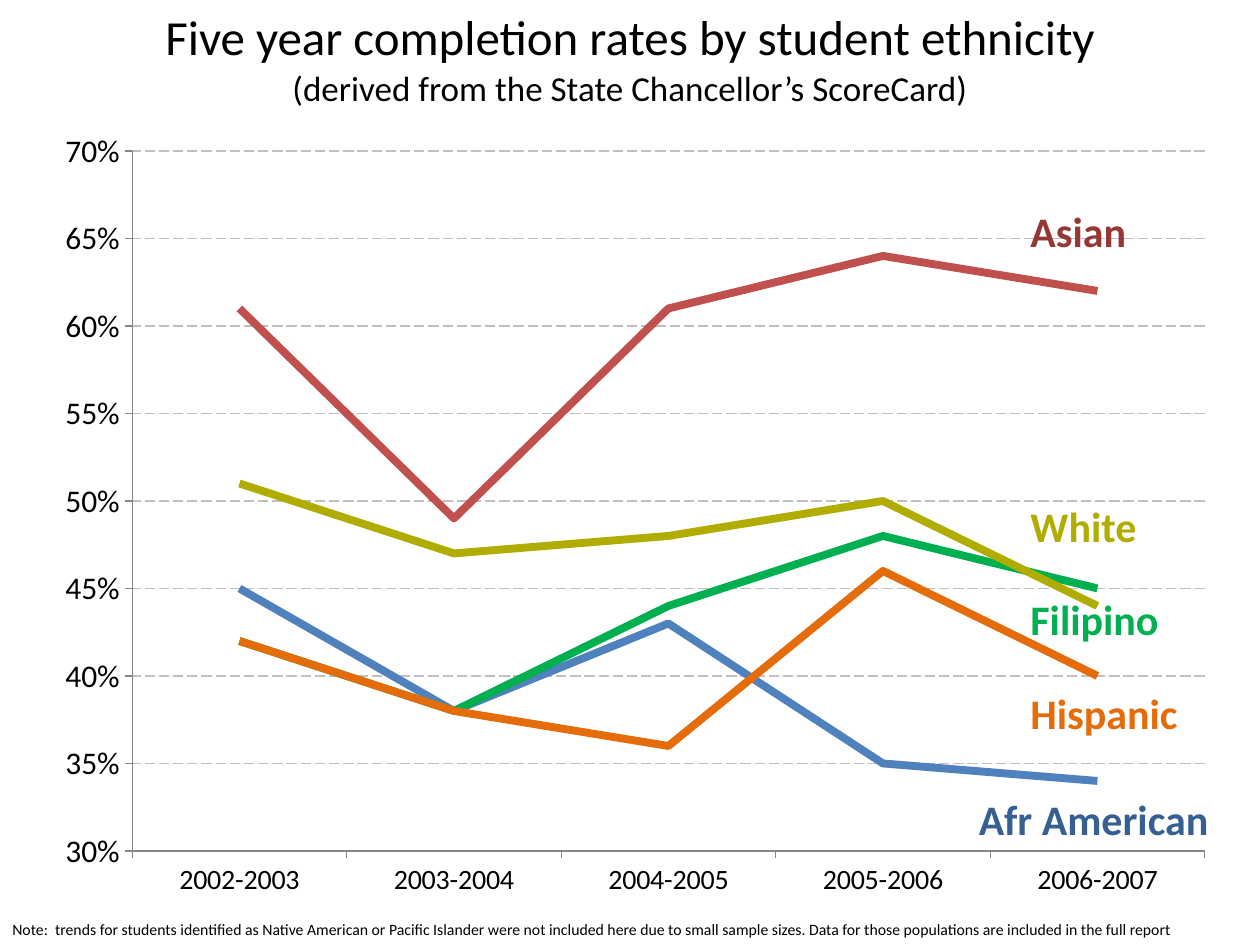
from lxml import etree
from pptx import Presentation
from pptx.chart.data import CategoryChartData
from pptx.dml.color import RGBColor
from pptx.enum.chart import XL_CHART_TYPE, XL_MARKER_STYLE, XL_TICK_MARK
from pptx.enum.dml import MSO_LINE
from pptx.enum.text import MSO_ANCHOR, MSO_AUTO_SIZE, PP_ALIGN
from pptx.util import Inches, Pt

LINE_CHART = XL_CHART_TYPE.LINE
NO_MARKER = XL_MARKER_STYLE.NONE
TICK_OUTSIDE, TICK_NONE = XL_TICK_MARK.OUTSIDE, XL_TICK_MARK.NONE
LONG_DASH = MSO_LINE.LONG_DASH
TOP, NO_AUTOFIT = MSO_ANCHOR.TOP, MSO_AUTO_SIZE.NONE
LEFT, CENTER = PP_ALIGN.LEFT, PP_ALIGN.CENTER

FONT = "Calibri"
COLORS = {
    "text": "000000", "grid": "BFBFBF", "axis": "868686",
    "blue": "4F81BD", "dark blue": "376092",
    "red": "C0504D", "dark red": "953735",
    "green": "00B050", "orange": "E46C0A", "olive": "B0AC00",
}

TITLE = "Five year completion rates by student ethnicity"
SUBTITLE = "(derived from the State Chancellor’s ScoreCard)"
NOTE = ("Note:  trends for students identified as Native American or Pacific Islander "
        "were not included here due to small sample sizes. Data for those populations "
        "are included in the full report")

YEARS = ["2002-2003", "2003-2004", "2004-2005", "2005-2006", "2006-2007"]
RATES = [
    ("Afr American", "blue", [0.45, 0.38, 0.43, 0.35, 0.34]),
    ("Asian", "red", [0.61, 0.49, 0.61, 0.64, 0.62]),
    ("Filipino", "green", [0.42, 0.38, 0.44, 0.48, 0.45]),
    ("Hispanic", "orange", [0.42, 0.38, 0.36, 0.46, 0.40]),
    ("White", "olive", [0.51, 0.47, 0.48, 0.50, 0.44]),
]
LINE_LABELS = [
    ("Hispanic", "orange", (8.08, 5.41, 1.5, 0.5)),
    ("Afr American", "dark blue", (7.67, 6.25, 2.33, 0.5)),
    ("Asian", "dark red", (8.08, 1.58, 1.25, 0.5)),
    ("White", "olive", (8.08, 3.92, 1.25, 0.5)),
    ("Filipino", "green", (8.08, 4.66, 1.25, 0.5)),
]


def rgb(name):
    return RGBColor.from_string(COLORS[name])


def style_font(font, size, color="text", bold=False):
    font.name = FONT
    font.size = Pt(size)
    font.bold = bold
    font.color.rgb = rgb(color)


def fill_text(shape, text, size, color="text", bold=False, align=LEFT):
    frame = shape.text_frame
    frame.text = text
    frame.word_wrap = True
    frame.auto_size = NO_AUTOFIT
    frame.vertical_anchor = TOP
    paragraph = frame.paragraphs[0]
    paragraph.alignment = align
    style_font(paragraph.runs[0].font, size, color, bold)


def add_text(slide, box, text, size, **style):
    fill_text(slide.shapes.add_textbox(*map(Inches, box)), text, size, **style)


def style_axis(axis, size):
    style_font(axis.tick_labels.font, size)
    axis.major_tick_mark = TICK_OUTSIDE
    axis.minor_tick_mark = TICK_NONE
    axis.format.line.color.rgb = rgb("axis")
    axis.format.line.width = Pt(0.75)


def add_rate_chart(slide):
    data = CategoryChartData(number_format="0%")
    data.categories = YEARS
    for name, _, values in RATES:
        data.add_series(name, values)
    box = map(Inches, (0.33, 0.92, 9.42, 6.33))
    chart = slide.shapes.add_chart(LINE_CHART, *box, data).chart
    chart.has_legend = False
    chart.has_title = False
    style_font(chart.font, 18)

    style_axis(chart.category_axis, 16)
    rate_axis = chart.value_axis
    style_axis(rate_axis, 18)
    rate_axis.minimum_scale = 0.3
    rate_axis.maximum_scale = 0.7
    rate_axis.major_unit = 0.05
    rate_axis.tick_labels.number_format = "0%"
    rate_axis.tick_labels.number_format_is_linked = False
    rate_axis.has_major_gridlines = True
    grid = rate_axis.major_gridlines.format.line
    grid.color.rgb = rgb("grid")
    grid.width = Pt(0.75)
    grid.dash_style = LONG_DASH

    plot = chart.plots[0]
    plot.vary_by_categories = False
    for series, (_, color, _) in zip(plot.series, RATES):
        series.smooth = False
        series.marker.style = NO_MARKER
        series.format.line.color.rgb = rgb(color)
        series.format.line.width = Pt(4.5)


def main():
    presentation = Presentation()
    presentation.slide_width = Inches(10)
    presentation.slide_height = Inches(7.5)
    slide = presentation.slides.add_slide(presentation.slide_layouts[5])

    add_rate_chart(slide)
    for text, color, box in LINE_LABELS:
        add_text(slide, box, text, 24, color=color, bold=True)
    add_text(slide, (0, 7.25, 10, 0.25), NOTE, 9)

    title = slide.shapes.title
    title.left, title.top, title.width, title.height = map(Inches, (0, 0, 10, 0.57))
    fill_text(title, TITLE, 28, align=CENTER)
    add_text(slide, (0, 0.48, 10, 0.44), SUBTITLE, 20, align=CENTER)

    presentation.save("out.pptx")


if __name__ == "__main__":
    main()
